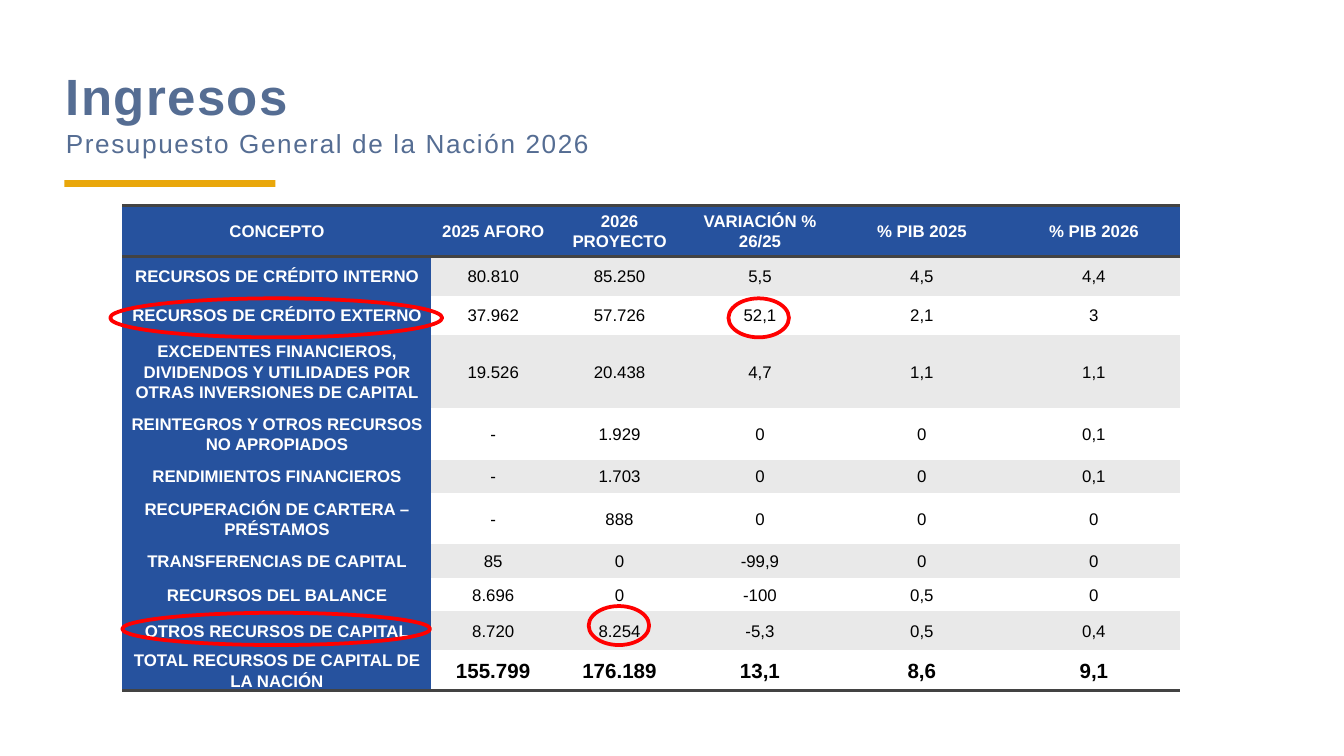
from lxml import etree
from pptx import Presentation
from pptx.dml.color import RGBColor
from pptx.enum import shapes, text
from pptx.oxml import ns
from pptx.util import Inches, Pt

BLUE, GRAY, WHITE, BLACK = "26529E", "E9E9E9", "FFFFFF", "000000"
SLATE, GOLD, RED, RULE = "556D93", "E9A70B", "FF0000", "434343"


def rgb(code):
    return RGBColor.from_string(code)


def write(para, words, size=9, color=BLACK, bold=False, align=text.PP_ALIGN.CENTER,
          lines=1.07, after=8, before=0, track=0):
    """Put one formatted run in a paragraph; track is letter spacing in points."""
    para.alignment = align
    para.line_spacing = lines
    para.space_before, para.space_after = Pt(before), Pt(after)
    run = para.add_run()
    run.text = words
    font = run.font
    font.name, font.size, font.bold = "Arial", Pt(size), bold
    font.color.rgb = rgb(color)
    if track:
        font._element.set("spc", str(round(track * 100)))


prs = Presentation()
prs.slide_width = Inches(10)
prs.slide_height = prs.slide_width * 9 // 16
slide = prs.slides.add_slide(prs.slide_layouts[5])

# Heading
title = slide.shapes.title
title.left, title.top = Inches(0.48), Inches(0.47)
title.width, title.height = Inches(6.78), Inches(0.72)
frame = title.text_frame
frame.word_wrap = True
frame.auto_size = text.MSO_AUTO_SIZE.NONE
frame.vertical_anchor = text.MSO_ANCHOR.TOP
frame.margin_left = frame.margin_top = Inches(0.01)
frame.margin_right = frame.margin_bottom = 0
head = dict(color=SLATE, align=text.PP_ALIGN.LEFT, lines=1.0, after=0)
write(frame.paragraphs[0], "Ingresos", size=27.3, bold=True, track=0.8, **head)
write(frame.add_paragraph(), "Presupuesto General de la Nación 2026",
      size=14, before=0.8, track=0.85, **head)

bar = slide.shapes.add_shape(shapes.MSO_SHAPE.RECTANGLE, Inches(0.48), Inches(1.34),
                             Inches(1.57), Inches(0.05))
bar.shadow.inherit = False
bar.fill.solid()
bar.fill.fore_color.rgb = rgb(GOLD)
bar.line.fill.background()

# Revenue table
rows = [
    ("CONCEPTO", "2025 AFORO", "2026 PROYECTO", "VARIACIÓN % 26/25", "% PIB 2025", "% PIB 2026"),
    ("RECURSOS DE CRÉDITO INTERNO", "80.810", "85.250", "5,5", "4,5", "4,4"),
    ("RECURSOS DE CRÉDITO EXTERNO", "37.962", "57.726", "52,1", "2,1", "3"),
    ("EXCEDENTES FINANCIEROS, DIVIDENDOS Y UTILIDADES POR OTRAS INVERSIONES DE CAPITAL",
     "19.526", "20.438", "4,7", "1,1", "1,1"),
    ("REINTEGROS Y OTROS RECURSOS NO APROPIADOS", "-", "1.929", "0", "0", "0,1"),
    ("RENDIMIENTOS FINANCIEROS", "-", "1.703", "0", "0", "0,1"),
    ("RECUPERACIÓN DE CARTERA – PRÉSTAMOS", "-", "888", "0", "0", "0"),
    ("TRANSFERENCIAS DE CAPITAL", "85", "0", "-99,9", "0", "0"),
    ("RECURSOS DEL BALANCE", "8.696", "0", "-100", "0,5", "0"),
    ("OTROS RECURSOS DE CAPITAL", "8.720", "8.254", "-5,3", "0,5", "0,4"),
    ("TOTAL RECURSOS DE CAPITAL DE LA NACIÓN", "155.799", "176.189", "13,1", "8,6", "9,1"),
]
widths = [2.3, 0.92, 0.96, 1.13, 1.28, 1.28]
heights = [0.38, 0.29, 0.29, 0.55, 0.38, 0.25, 0.38, 0.25, 0.25, 0.29, 0.29]
last = len(rows) - 1

table = slide.shapes.add_table(len(rows), len(widths), Inches(0.91), Inches(1.53),
                               Inches(sum(widths)), Inches(sum(heights))).table
for col, width in zip(table.columns, widths):
    col.width = Inches(width)
for row, height in zip(table.rows, heights):
    row.height = Inches(height)

for r, values in enumerate(rows):
    for c, value in enumerate(values):
        cell = table.cell(r, c)
        label = r == 0 or c == 0
        cell.vertical_anchor = text.MSO_ANCHOR.MIDDLE
        cell.margin_left = cell.margin_right = Inches(0.05)
        cell.margin_top = cell.margin_bottom = 0
        write(cell.text_frame.paragraphs[0], value,
              size=11 if r == last and not label else 9,
              color=WHITE if label else BLACK, bold=label or r == last)

        # Borders come before the fill in a cell's properties
        props = cell._tc.get_or_add_tcPr()
        ruled = {0: ("lnT", "lnB"), 1: ("lnT",), last: ("lnB",)}.get(r, ())
        for side in ("lnL", "lnR", "lnT", "lnB"):
            edge = etree.SubElement(props, ns.qn("a:" + side))
            if side in ruled:
                edge.set("w", str(Pt(2)))
                paint = etree.SubElement(edge, ns.qn("a:solidFill"))
                etree.SubElement(paint, ns.qn("a:srgbClr"), val=RULE)
            else:
                edge.set("w", "0")
                etree.SubElement(edge, ns.qn("a:noFill"))
        cell.fill.solid()
        cell.fill.fore_color.rgb = rgb(BLUE if label else GRAY if r % 2 else WHITE)

# Rings around the key figures
for left, top, width, height in [
    (0.91, 4.56, 2.29, 0.24),
    (0.82, 2.22, 2.47, 0.29),
    (5.42, 2.22, 0.45, 0.29),
    (4.38, 4.51, 0.45, 0.29),
]:
    ring = slide.shapes.add_shape(shapes.MSO_SHAPE.OVAL, Inches(left), Inches(top),
                                  Inches(width), Inches(height))
    ring.shadow.inherit = False
    ring.fill.background()
    ring.line.color.rgb = rgb(RED)
    ring.line.width = Pt(2)

prs.save("out.pptx")
